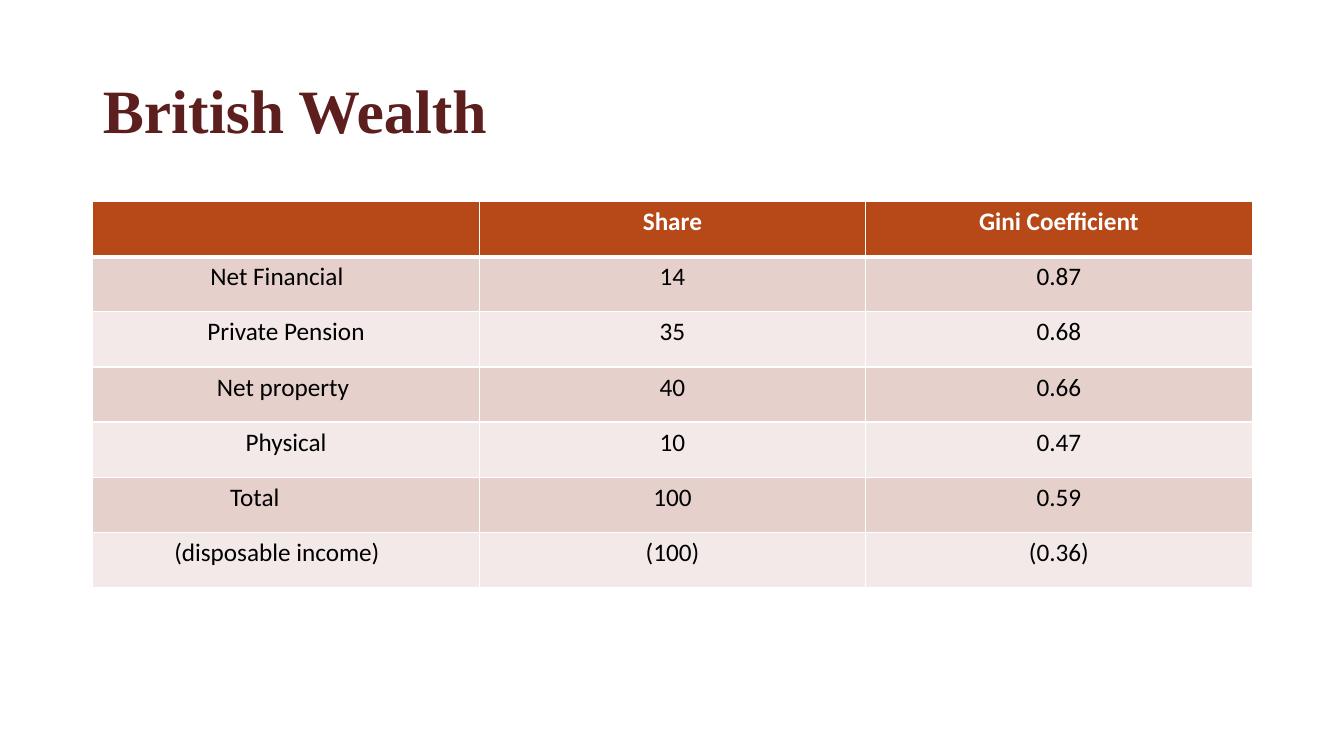
from lxml import etree
from pptx import Presentation
from pptx.dml.color import RGBColor
from pptx.enum.text import MSO_ANCHOR, PP_ALIGN
from pptx.oxml.ns import qn
from pptx.util import Inches, Pt

LEFT, CENTER = PP_ALIGN.LEFT, PP_ALIGN.CENTER
MIDDLE = MSO_ANCHOR.MIDDLE

TITLE_BOX = (0.92, 0.4, 11.5, 1.45)
TABLE_BOX = (0.92, 2, 11.5, 3.83)
TITLE_COLOR, HEADER_FILL = "5D1F1E", "B74919"
BAND_FILLS = ("E6D0CC", "F3E9E8")
WHITE, BLACK = "FFFFFF", "000000"
CELL_MARGIN = 0.1

HEADER = ("", "Share", "Gini Coefficient")
WEALTH = (
    ("Net Financial", "14", "0.87"),
    ("Private Pension", "35", "0.68"),
    ("Net property", "40", "0.66"),
    ("Physical", "10", "0.47"),
    ("Total", "100", "0.59"),
    ("(disposable income)", "(100)", "(0.36)"),
)
# Extra right margin, in inches, that moves a label left of its column centre
LABEL_INSETS = {
    "Net Financial": 0.18,
    "Net property": 0.06,
    "Total": 0.62,
    "(disposable income)": 0.18,
}


def rgb(color):
    return RGBColor.from_string(color)


def add_run(paragraph, text, font, size, color, bold):
    run = paragraph.add_run()
    run.text = text
    run.font.name = font
    run.font.size = Pt(size)
    run.font.bold = bold
    run.font.color.rgb = rgb(color)


def add_borders(cell, top, bottom):
    """Draw white cell edges; top and bottom are widths in points."""
    properties = cell._tc.get_or_add_tcPr()
    for side, width in (("L", 1), ("R", 1), ("T", top), ("B", bottom)):
        edge = etree.SubElement(properties, qn(f"a:ln{side}"), w=str(Pt(width)))
        fill = etree.SubElement(edge, qn("a:solidFill"))
        etree.SubElement(fill, qn("a:srgbClr"), val=WHITE)


def add_title(slide, box, text):
    title = slide.shapes.title
    title.left, title.top, title.width, title.height = map(Inches, box)
    frame = title.text_frame
    frame.word_wrap = True
    frame.vertical_anchor = MIDDLE
    paragraph = frame.paragraphs[0]
    paragraph.alignment = LEFT
    paragraph.line_spacing = 0.9
    add_run(paragraph, text, "Times New Roman", 44, TITLE_COLOR, True)


def fill_cell(cell, text, row):
    is_header = row == 0
    add_borders(cell, 3 if row == 1 else 1, 3 if is_header else 1)
    cell.fill.solid()
    cell.fill.fore_color.rgb = rgb(HEADER_FILL if is_header else BAND_FILLS[(row - 1) % 2])
    cell.margin_right = Inches(CELL_MARGIN + LABEL_INSETS.get(text, 0))
    paragraph = cell.text_frame.paragraphs[0]
    paragraph.alignment = CENTER
    if text:
        add_run(paragraph, text, "Calibri", 18, WHITE if is_header else BLACK, is_header)


def add_wealth_table(slide, box, rows):
    # add_table shares the box equally between its rows and columns
    table = slide.shapes.add_table(len(rows), len(rows[0]), *map(Inches, box)).table
    for row, texts in enumerate(rows):
        for column, text in enumerate(texts):
            fill_cell(table.cell(row, column), text, row)


def main():
    deck = Presentation()
    deck.slide_width, deck.slide_height = Inches(13.33), Inches(7.5)
    slide = deck.slides.add_slide(deck.slide_layouts.get_by_name("Title Only"))
    add_title(slide, TITLE_BOX, "British Wealth")
    add_wealth_table(slide, TABLE_BOX, (HEADER, *WEALTH))
    deck.save("out.pptx")


if __name__ == "__main__":
    main()
